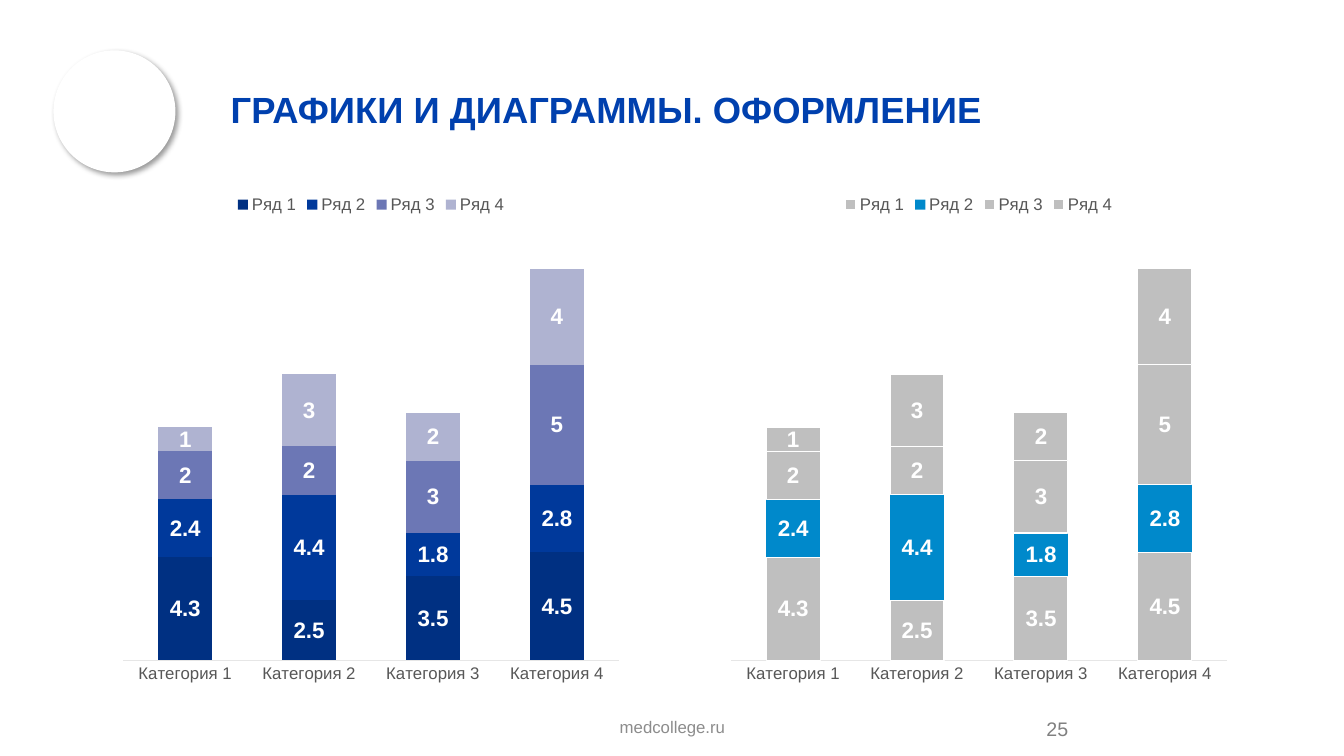
import pptx
import pptx.chart.data
import pptx.dml.color
import pptx.enum.chart
import pptx.enum.shapes
import pptx.enum.text
import pptx.oxml
import pptx.oxml.ns
import pptx.util
from pptx.dml.color import RGBColor
from pptx.util import Inches, Pt

FONT = "Arial"
WHITE = RGBColor(0xFF, 0xFF, 0xFF)
TITLE_BLUE = RGBColor(0x00, 0x40, 0xAE)
NUMBER_GRAY = RGBColor(0x80, 0x80, 0x80)
FOOTER_GRAY = RGBColor(0x8C, 0x8C, 0x8C)
CHART_GRAY = RGBColor(0x57, 0x57, 0x57)
AXIS_GRAY = RGBColor(0xE6, 0xE6, 0xE6)
MUTED_GRAY = RGBColor(0xBF, 0xBF, 0xBF)
ACCENT_BLUE = RGBColor(0x00, 0x89, 0xCB)
SHADES = [
    RGBColor(0x00, 0x30, 0x82),
    RGBColor(0x00, 0x39, 0x9B),
    RGBColor(0x6C, 0x77, 0xB5),
    RGBColor(0xAF, 0xB3, 0xD1),
]
HIGHLIGHT = [MUTED_GRAY, ACCENT_BLUE, MUTED_GRAY, MUTED_GRAY]

CATEGORIES = [f"Категория {number}" for number in range(1, 5)]
SERIES_VALUES = [
    (4.3, 2.5, 3.5, 4.5),
    (2.4, 4.4, 1.8, 2.8),
    (2, 2, 3, 5),
    (1, 3, 2, 4),
]
SHADOW = (
    f'<a:outerShdw {pptx.oxml.ns.nsdecls("a")} blurRad="{Pt(4)}" dist="{Pt(3)}" '
    'dir="2700000" algn="tl" rotWithShape="0">'
    '<a:srgbClr val="000000"><a:alpha val="40000"/></a:srgbClr></a:outerShdw>'
)


def style_font(font, size, color, bold=False):
    """Apply the slide's typeface with a size, colour and weight."""
    font.name = FONT
    font.size = Pt(size)
    font.bold = bold
    font.color.rgb = color


def add_label(slide, box, text, size, color, bold=False, anchor="MIDDLE", align="LEFT"):
    """Add a one-paragraph text box and return its paragraph."""
    shape = slide.shapes.add_textbox(*map(Inches, box))
    text_frame = shape.text_frame
    text_frame.word_wrap = True
    text_frame.vertical_anchor = pptx.enum.text.MSO_ANCHOR[anchor]
    text_frame.text = text
    paragraph = text_frame.paragraphs[0]
    paragraph.alignment = pptx.enum.text.PP_ALIGN[align]
    style_font(paragraph.runs[0].font, size, color, bold)
    return paragraph


def add_header(slide, box):
    """Place the shadowed circle at the left of the box and the title beside it."""
    left, top, width, height = box
    circle = slide.shapes.add_shape(
        pptx.enum.shapes.MSO_SHAPE.OVAL, *map(Inches, (left, top, height, height))
    )
    circle.fill.solid()
    circle.fill.fore_color.rgb = WHITE
    circle.line.fill.background()
    circle.shadow.inherit = False
    effects = circle._element.spPr.find(pptx.oxml.ns.qn("a:effectLst"))
    effects.append(pptx.oxml.parse_xml(SHADOW))
    indent = 1.66
    title = add_label(
        slide, (left + indent, top, width - indent, height),
        "ГРАФИКИ И ДИАГРАММЫ. ОФОРМЛЕНИЕ", 26, TITLE_BLUE, bold=True,
    )
    title.line_spacing = 0.9


def add_stacked_chart(slide, box, colors, outlined=()):
    """Add a stacked column chart with the given series colours and outlines."""
    chart_data = pptx.chart.data.CategoryChartData()
    chart_data.categories = CATEGORIES
    for number, values in enumerate(SERIES_VALUES, 1):
        chart_data.add_series(f"Ряд {number}", values)
    chart = slide.shapes.add_chart(
        pptx.enum.chart.XL_CHART_TYPE.COLUMN_STACKED, *map(Inches, box), chart_data
    ).chart
    style_font(chart.font, 10, CHART_GRAY)
    chart.has_title = False
    chart.has_legend = True
    chart.legend.position = pptx.enum.chart.XL_LEGEND_POSITION.TOP
    chart.legend.include_in_layout = False
    style_font(chart.legend.font, 12, CHART_GRAY)

    category_axis = chart.category_axis
    category_axis.major_tick_mark = pptx.enum.chart.XL_TICK_MARK.NONE
    category_axis.format.line.color.rgb = AXIS_GRAY
    category_axis.format.line.width = Pt(0.75)
    style_font(category_axis.tick_labels.font, 12, CHART_GRAY)
    value_axis = chart.value_axis
    value_axis.visible = False
    value_axis.has_major_gridlines = False
    value_axis.minimum_scale = 0
    value_axis.maximum_scale = 18

    plot = chart.plots[0]
    plot.gap_width = 130
    plot.overlap = 100
    plot.vary_by_categories = False
    for index, (series, color) in enumerate(zip(plot.series, colors)):
        series.format.fill.solid()
        series.format.fill.fore_color.rgb = color
        if index in outlined:
            series.format.line.color.rgb = WHITE
            series.format.line.width = Pt(0.75)
        else:
            series.format.line.fill.background()
        labels = series.data_labels
        labels.show_value = True
        labels.position = pptx.enum.chart.XL_LABEL_POSITION.CENTER
        style_font(labels.font, 16, WHITE, bold=True)


def add_footer(slide, box):
    """Place the web address and the slide number in the footer band."""
    left, top, width, height = box
    add_label(
        slide, (left, top + 0.04, 4.5, height), "medcollege.ru", 12, FOOTER_GRAY,
        anchor="TOP", align="CENTER",
    )
    number_width = 1.88
    add_label(
        slide, (left + width - number_width, top, number_width, height),
        "25", 14, NUMBER_GRAY,
    )


def main():
    """Build the slide and save it."""
    presentation = pptx.Presentation()
    presentation.slide_width = Inches(13.33)
    presentation.slide_height = Inches(7.5)
    slide = presentation.slides.add_slide(presentation.slide_layouts[6])
    add_header(slide, (0.53, 0.5, 12.06, 1.21))
    add_stacked_chart(slide, (1.12, 1.83, 5.12, 5.04), SHADES)
    add_stacked_chart(slide, (7.15, 1.83, 5.12, 5.04), HIGHLIGHT, outlined=(0, 2, 3))
    add_footer(slide, (4.42, 7.02, 7.74, 0.41))
    presentation.save("out.pptx")


if __name__ == "__main__":
    main()
